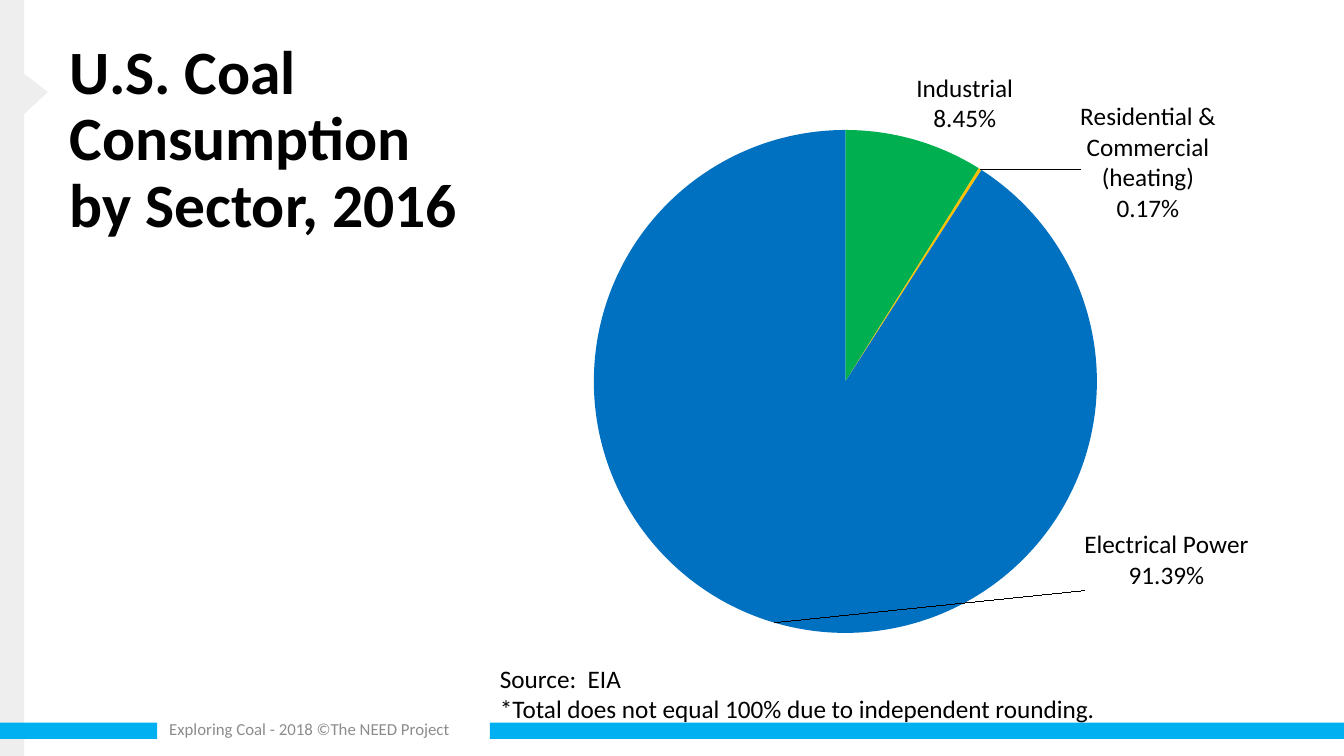
from dataclasses import dataclass

from lxml.etree import SubElement
from pptx import Presentation
from pptx.chart.data import CategoryChartData
from pptx.dml.color import RGBColor
from pptx.enum.chart import XL_CHART_TYPE, XL_LABEL_POSITION
from pptx.enum.shapes import MSO_SHAPE
from pptx.enum.text import MSO_ANCHOR, MSO_AUTO_SIZE, PP_ALIGN
from pptx.oxml import parse_xml
from pptx.oxml.ns import nsdecls, qn
from pptx.util import Inches, Pt


@dataclass(frozen=True)
class Theme:
    font: str = "Calibri"
    text: str = "000000"
    muted: str = "8C8C8C"
    rail: str = "EEEEEE"
    bar: str = "00B0F0"
    industrial: str = "00B050"
    heating: str = "FFC000"
    power: str = "0070C0"
    title_size: int = 44
    body_size: int = 18
    footer_size: int = 12


@dataclass(frozen=True)
class Sector:
    name: str
    value: float
    color: str
    label: str
    label_shift: tuple = None


class SlideBuilder:
    def __init__(self, slide, theme):
        self.slide = slide
        self.theme = theme

    def style_font(self, font, size, color, bold=False):
        font.name = self.theme.font
        font.size = Pt(size)
        font.bold = bold
        font.color.rgb = RGBColor.from_string(color)

    def paint(self, shape, color):
        shape.fill.solid()
        shape.fill.fore_color.rgb = RGBColor.from_string(color)
        shape.line.fill.background()
        shape.shadow.inherit = False

    def rectangle(self, box, color):
        shape = self.slide.shapes.add_shape(MSO_SHAPE.RECTANGLE, *map(Inches, box))
        self.paint(shape, color)

    def polygon(self, points, color, rotation):
        start, *rest = [(Inches(x), Inches(y)) for x, y in points]
        builder = self.slide.shapes.build_freeform(*start)
        builder.add_line_segments(rest, close=True)
        shape = builder.convert_to_shape()
        shape.rotation = rotation
        self.paint(shape, color)

    def title(self, box, text):
        shape = self.slide.shapes.title
        shape.left, shape.top, shape.width, shape.height = map(Inches, box)
        frame = shape.text_frame
        frame.text = text
        frame.word_wrap = True
        frame.auto_size = MSO_AUTO_SIZE.NONE
        frame.vertical_anchor = MSO_ANCHOR.MIDDLE
        paragraph = frame.paragraphs[0]
        paragraph.alignment = PP_ALIGN.LEFT
        paragraph.line_spacing = 0.9
        self.style_font(paragraph.font, self.theme.title_size, self.theme.text, True)

    def text(self, box, text, size, color, wrap=True, anchor=MSO_ANCHOR.TOP):
        shape = self.slide.shapes.add_textbox(*map(Inches, box))
        frame = shape.text_frame
        frame.text = text
        frame.word_wrap = wrap
        frame.vertical_anchor = anchor
        for paragraph in frame.paragraphs:
            self.style_font(paragraph.font, size, color)

    def layout(self, **values):
        layout = parse_xml(f"<c:layout {nsdecls('c')}/>")
        manual = SubElement(layout, qn("c:manualLayout"))
        for name, value in values.items():
            SubElement(manual, qn(f"c:{name}")).set("val", str(value))
        return layout

    def pie(self, box, sectors, plot_left, plot_top, diameter):
        data = CategoryChartData(number_format="0.0")
        data.categories = [sector.name for sector in sectors]
        data.add_series("Series 1", [sector.value for sector in sectors])
        chart = self.slide.shapes.add_chart(
            XL_CHART_TYPE.PIE, *map(Inches, box), data
        ).chart
        chart.has_title = False
        chart.has_legend = False
        self.style_font(chart.font, self.theme.body_size, self.theme.text)

        width, height = box[2:]
        plot_area = chart.plots[0]._element.getparent()
        for old_layout in plot_area.findall(qn("c:layout")):
            plot_area.remove(old_layout)
        plot_area.insert(0, self.layout(
            layoutTarget="inner", xMode="edge", yMode="edge",
            x=plot_left / width, y=plot_top / height,
            w=diameter / width, h=diameter / height,
        ))

        series = chart.plots[0].series[0]
        labels = series.data_labels
        labels.show_value = False
        labels.show_category_name = True
        labels.show_percentage = True
        labels.number_format = "0.00%"
        labels.number_format_is_linked = False
        labels.position = XL_LABEL_POSITION.OUTSIDE_END
        for index, sector in enumerate(sectors):
            self.slice(series.points[index], sector)
        for element, sector in zip(labels._element.findall(qn("c:dLbl")), sectors):
            if sector.label_shift:
                shift_x, shift_y = sector.label_shift
                element.insert(1, self.layout(x=shift_x / width, y=shift_y / height))

    def slice(self, point, sector):
        fill = point.format.fill
        fill.solid()
        fill.fore_color.rgb = RGBColor.from_string(sector.color)
        point.format.line.fill.background()
        label = point.data_label
        label.text_frame.text = sector.label
        label.position = XL_LABEL_POSITION.OUTSIDE_END
        for paragraph in label.text_frame.paragraphs:
            for run in paragraph.runs:
                self.style_font(run.font, self.theme.body_size, self.theme.text)


def main():
    theme = Theme()
    presentation = Presentation()
    presentation.slide_width = Inches(13.33)
    presentation.slide_height = Inches(7.5)
    slide = presentation.slides.add_slide(presentation.slide_layouts[5])
    builder = SlideBuilder(slide, theme)

    builder.rectangle((0, 0, 0.24, 7.5), theme.rail)
    for left, width in ((0, 1.56), (4.86, 8.67)):
        builder.rectangle((left, 7.17, width, 0.16), theme.bar)
    builder.polygon(((-0.08, 1.17), (0.25, 0.62), (0.42, 1.07)), theme.rail, 328.6)

    builder.title((0.59, 0.27, 4.26, 2.25), "U.S. Coal Consumption by Sector, 2016")
    builder.text(
        (4.86, 6.53, 6.18, 0.71),
        "Source:  EIA\n*Total does not equal 100% due to independent rounding.",
        theme.body_size, theme.text, wrap=False,
    )
    sectors = (
        Sector("Industrial", 8.9, theme.industrial, "Industrial\n8.45%"),
        Sector("Commercial", 0.2, theme.heating,
               "Residential & Commercial (heating)\n0.17%", (0.96, 0.59)),
        Sector("Electrical Power", 90.9, theme.power,
               "Electrical Power\n91.39%", (4.72, -0.98)),
    )
    builder.pie((3.7, 0.13, 9.49, 6.89), sectors, 2.19, 1.16, 4.99)
    builder.text(
        (1.58, 7.03, 3.28, 0.4), "Exploring Coal - 2018 ©The NEED Project",
        theme.footer_size, theme.muted, anchor=MSO_ANCHOR.MIDDLE,
    )
    presentation.save("out.pptx")


if __name__ == "__main__":
    main()
